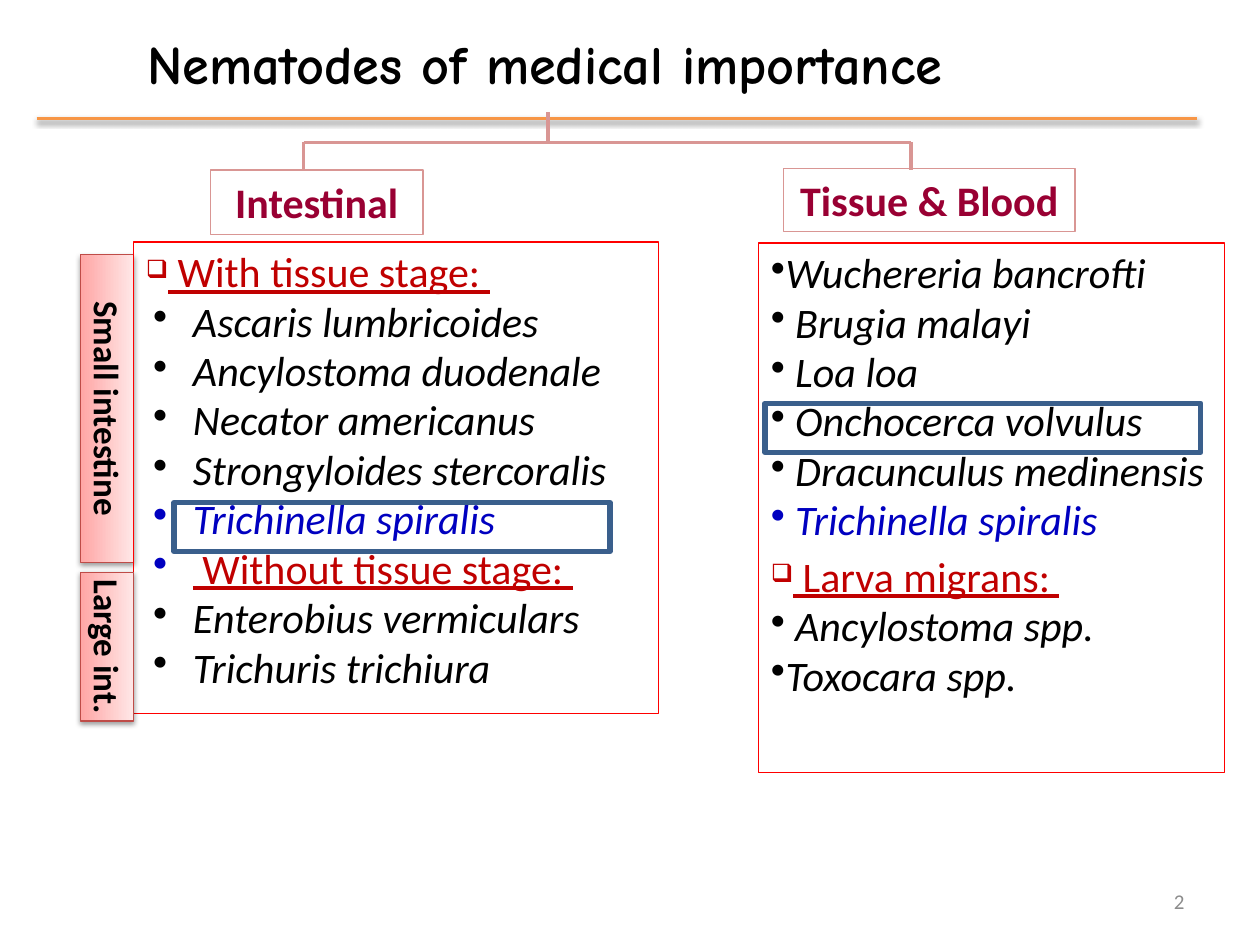
"""Build a slide that sorts the medically important nematodes by habitat."""
from dataclasses import dataclass

from lxml.etree import SubElement
from pptx import Presentation
from pptx.dml.color import RGBColor
from pptx.enum.shapes import MSO_CONNECTOR, MSO_SHAPE
from pptx.enum.text import MSO_ANCHOR, PP_ALIGN
from pptx.oxml.ns import qn
from pptx.util import Cm, Pt


@dataclass(frozen=True)
class Theme:
    ink: str = "000000"
    rule: str = "F79646"
    branch: str = "D99694"
    label: str = "990033"
    stage: str = "C00000"
    special: str = "0000C0"
    frame: str = "FF0000"
    highlight: str = "3A5F8C"
    tab_line: str = "BF4C48"
    tab_dark: str = "FFA6A5"
    tab_light: str = "FFE7E7"
    muted: str = "8C8C8C"
    title_font: str = "Comic Neue"
    body_font: str = "Calibri"
    title_size: int = 31
    body_size: int = 24
    tab_size: int = 20
    number_size: int = 12


THEME = Theme()


class NematodeSlide:
    def __init__(self, slide, theme):
        self.shapes = slide.shapes
        self.theme = theme

    def effects(self, shape, shadow=False):
        effect_list = SubElement(shape.element.spPr, qn("a:effectLst"))
        if shadow:
            outer = SubElement(effect_list, qn("a:outerShdw"), blurRad=str(Pt(3.1)),
                               dist=str(Pt(1.6)), dir="5400000", rotWithShape="0")
            black = SubElement(outer, qn("a:srgbClr"), val="000000")
            SubElement(black, qn("a:alpha"), val="38000")

    def outline(self, line, color, width):
        line.color.rgb = RGBColor.from_string(color)
        line.width = Pt(width)

    def line(self, start, end, color, shadow=False):
        connector = self.shapes.add_connector(
            MSO_CONNECTOR.STRAIGHT, *map(Cm, start + end))
        self.outline(connector.line, color, 2)
        self.effects(connector, shadow)

    def box(self, area, color, width=0.75):
        shape = self.shapes.add_shape(MSO_SHAPE.RECTANGLE, *map(Cm, area))
        shape.fill.background()
        self.outline(shape.line, color, width)
        return shape

    def run(self, paragraph, text, color, size, **formats):
        font = paragraph.add_run().font
        paragraph.runs[-1].text = text
        font.color.rgb = RGBColor.from_string(color)
        values = {"name": self.theme.body_font, "size": Pt(size), **formats}
        for attribute, value in values.items():
            setattr(font, attribute, value)

    def text(self, area, text, color, size, align, wrap=True, **formats):
        frame = self.shapes.add_textbox(*map(Cm, area)).text_frame
        frame.word_wrap = wrap
        frame.vertical_anchor = MSO_ANCHOR.MIDDLE
        frame.paragraphs[0].alignment = align
        self.run(frame.paragraphs[0], text, color, size, **formats)

    def label(self, area, text):
        shape = self.box(area, self.theme.branch)
        self.effects(shape)
        shape.text_frame.vertical_anchor = MSO_ANCHOR.TOP
        paragraph = shape.text_frame.paragraphs[0]
        paragraph.alignment = PP_ALIGN.CENTER
        self.run(paragraph, text, self.theme.label, self.theme.body_size, bold=True)

    def side_tab(self, area, text):
        shape = self.box(area, self.theme.tab_line)
        shape.rotation = 90
        shape.fill.gradient()
        shape.fill.gradient_angle = 90
        for stop, color in zip(shape.fill.gradient_stops,
                               (self.theme.tab_dark, self.theme.tab_light)):
            stop.color.rgb = RGBColor.from_string(color)
        self.effects(shape, shadow=True)
        frame = shape.text_frame
        frame.margin_left = frame.margin_right = Cm(0.03)
        frame.margin_top = frame.margin_bottom = Cm(0.1)
        frame.vertical_anchor = MSO_ANCHOR.TOP
        frame.paragraphs[0].alignment = PP_ALIGN.CENTER
        self.run(frame.paragraphs[0], text, self.theme.ink, self.theme.tab_size, bold=True)

    def bullet(self, paragraph, char, indent, hanging):
        properties = paragraph._p.get_or_add_pPr()
        properties.set("marL", str(Cm(indent)))
        properties.set("indent", str(-Cm(hanging)))
        if char == "❑":
            SubElement(properties, qn("a:buSzPct"), val="60000")
        SubElement(properties, qn("a:buChar"), char=char)

    def species_list(self, area, entries, indent=0, hanging=0):
        shape = self.box(area, self.theme.frame)
        self.effects(shape)
        frame = shape.text_frame
        frame.vertical_anchor = MSO_ANCHOR.TOP
        for index, (kind, text) in enumerate(entries):
            paragraph = frame.paragraphs[0] if index == 0 else frame.add_paragraph()
            paragraph.alignment = PP_ALIGN.LEFT
            paragraph.line_spacing = 0.98
            heading = kind == "heading"
            self.bullet(paragraph, "❑" if heading else "•",
                        *((0, 0) if heading else (indent, hanging)))
            if heading and index:
                paragraph.space_before = Pt(4)
            if kind == "subheading":
                self.run(paragraph, " ", self.theme.special, self.theme.body_size, italic=True)
            if kind in ("heading", "subheading"):
                self.run(paragraph, text, self.theme.stage, self.theme.body_size, underline=True)
            else:
                color = self.theme.special if kind == "special" else self.theme.ink
                self.run(paragraph, text, color, self.theme.body_size, italic=True)

    def highlight(self, left, top):
        self.effects(self.box((left, top, 8.79, 0.99), self.theme.highlight, 3))


INTESTINAL = [
    ("heading", " With tissue stage: "),
    ("species", " Ascaris lumbricoides"),
    ("species", " Ancylostoma duodenale"),
    ("species", " Necator americanus"),
    ("species", " Strongyloides stercoralis"),
    ("special", " Trichinella spiralis"),
    ("subheading", " Without tissue stage: "),
    ("species", " Enterobius vermiculars"),
    ("species", " Trichuris trichiura"),
]
TISSUE_AND_BLOOD = [
    ("species", "Wuchereria bancrofti"),
    ("species", " Brugia malayi"),
    ("species", " Loa loa"),
    ("species", " Onchocerca volvulus"),
    ("species", " Dracunculus medinensis"),
    ("special", " Trichinella spiralis"),
    ("heading", " Larva migrans: "),
    ("species", " Ancylostoma spp."),
    ("species", "Toxocara spp."),
]


def main():
    deck = Presentation()
    deck.slide_width, deck.slide_height = Cm(25.4), Cm(19.05)
    page = NematodeSlide(deck.slides.add_slide(deck.slide_layouts[6]), THEME)

    page.line((0.74, 2.39), (24.13, 2.39), THEME.rule, shadow=True)
    page.text((2.72, 0.48, 19.18, 1.57), "Nematodes of medical importance", THEME.ink,
              THEME.title_size, PP_ALIGN.LEFT, wrap=False, name=THEME.title_font, bold=True)

    fork, left_branch, right_branch = 2.87, 6.12, 18.36
    page.line((left_branch, fork), (right_branch, fork), THEME.branch)
    for branch in (left_branch, right_branch):
        page.line((branch, fork), (branch, 3.43), THEME.branch)
    page.label((4.24, 3.43, 4.29, 1.3), "Intestinal")
    page.label((15.8, 3.4, 5.87, 1.27), "Tissue & Blood")
    page.line((11.05, 2.26), (11.05, fork), THEME.branch)

    page.side_tab((-0.94, 7.7, 6.2, 1.07), "Small intestine")
    page.species_list((2.69, 4.88, 10.59, 9.5), INTESTINAL, indent=0.76, hanging=0.61)
    page.species_list((15.29, 4.9, 9.4, 10.67), TISSUE_AND_BLOOD)
    page.side_tab((0.66, 12.5, 3, 1.07), "Large int.")
    page.highlight(3.51, 10.13)
    page.text((18.21, 17.65, 5.92, 1.02), "2", THEME.muted, THEME.number_size, PP_ALIGN.RIGHT)
    page.highlight(15.42, 8.13)
    deck.save("out.pptx")


if __name__ == "__main__":
    main()
